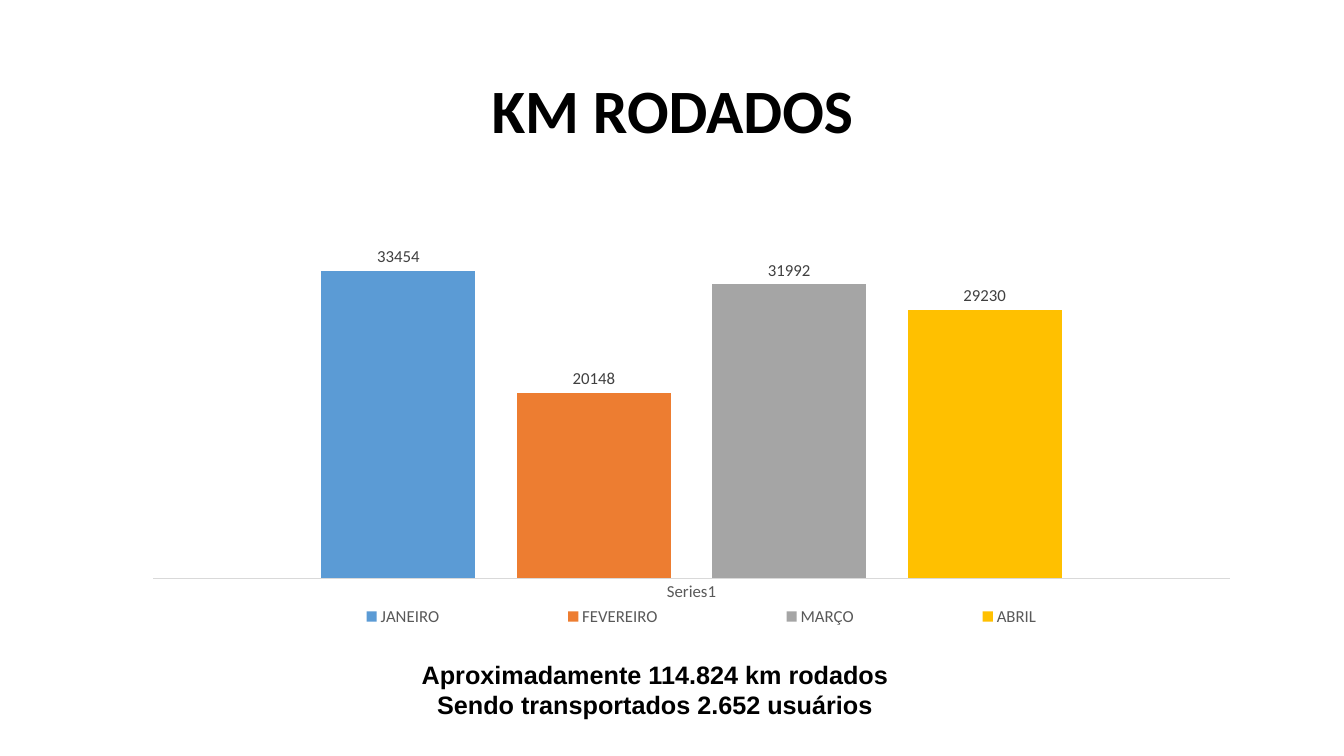
"""Build the slide on kilometres driven per month."""
from dataclasses import dataclass

import lxml.etree
import pptx
import pptx.chart.data
import pptx.dml.color
import pptx.enum.chart
import pptx.enum.text
import pptx.oxml.ns
import pptx.util

RGBColor = pptx.dml.color.RGBColor
BLACK = RGBColor(0x00, 0x00, 0x00)
DARK = RGBColor(0x40, 0x40, 0x40)
GREY = RGBColor(0x59, 0x59, 0x59)
PALE = RGBColor(0xD9, 0xD9, 0xD9)
BLUE = RGBColor(0x5B, 0x9B, 0xD5)
ORANGE = RGBColor(0xED, 0x7D, 0x31)
SILVER = RGBColor(0xA5, 0xA5, 0xA5)
GOLD = RGBColor(0xFF, 0xC0, 0x00)

WIDTH = pptx.util.Inches(13.33)
HEIGHT = pptx.util.Inches(7.5)


@dataclass(frozen=True)
class Box:
    """A frame in percent of the slide or chart size."""
    left: float
    top: float
    width: float
    height: float

    def place(self) -> tuple[int, int, int, int]:
        """Return the frame in slide units."""
        return (round(WIDTH * self.left / 100), round(HEIGHT * self.top / 100),
                round(WIDTH * self.width / 100), round(HEIGHT * self.height / 100))


@dataclass(frozen=True)
class Month:
    """One bar of the chart."""
    name: str
    km: int
    color: RGBColor


@dataclass(frozen=True)
class Note:
    """A centred block of bold text."""
    box: Box
    lines: tuple[str, ...]
    font: str
    size: int
    anchor: pptx.enum.text.MSO_ANCHOR
    spacing: float


MONTHS = (
    Month("JANEIRO", 33454, BLUE),
    Month("FEVEREIRO", 20148, ORANGE),
    Month("MARÇO", 31992, SILVER),
    Month("ABRIL", 29230, GOLD),
)
NOTES = (
    Note(Box(6.9, 5.33, 86.27, 19.33), ("KM RODADOS",), "Calibri", 44,
         pptx.enum.text.MSO_ANCHOR.MIDDLE, 0.9),
    Note(Box(12.23, 86.53, 73.52, 9.47),
         ("Aproximadamente 114.824 km rodados ", "Sendo transportados 2.652 usuários "),
         "Arial", 18, pptx.enum.text.MSO_ANCHOR.TOP, 1.0),
)
CHART = Box(6.9, 26.67, 86.27, 57.47)
PLOT = Box(5.2, 2.1, 92.9, 84.6)
LEGEND = Box(13, 91, 79, 9)


def style(font: pptx.text.text.Font, name: str, size: int, color: RGBColor) -> None:
    """Set the face, size and colour of a font."""
    font.name = name
    font.size = pptx.util.Pt(size)
    font.color.rgb = color


def write(slide: pptx.slide.Slide, note: Note) -> None:
    """Draw a block of text."""
    frame = slide.shapes.add_textbox(*note.box.place()).text_frame
    frame.word_wrap = True
    frame.vertical_anchor = note.anchor
    frame.text = "\n".join(note.lines)
    for line in frame.paragraphs:
        line.alignment = pptx.enum.text.PP_ALIGN.CENTER
        line.line_spacing = note.spacing
        line.font.bold = True
        style(line.font, note.font, note.size, BLACK)


def arrange(part: lxml.etree.ElementBase, index: int, box: Box, inner: bool) -> None:
    """Fix the place of a chart part."""
    name = pptx.oxml.ns.qn
    for old in part.findall(name("c:layout")):
        part.remove(old)
    layout = lxml.etree.Element(name("c:layout"))
    manual = lxml.etree.SubElement(layout, name("c:manualLayout"))
    rules = [("layoutTarget", "inner")] if inner else []
    rules += [("xMode", "edge"), ("yMode", "edge")]
    shares = zip("xywh", (box.left, box.top, box.width, box.height))
    rules += [(key, f"{share / 100:.3f}") for key, share in shares]
    for key, value in rules:
        lxml.etree.SubElement(manual, name(f"c:{key}")).set("val", value)
    part.insert(index, layout)


def plot(slide: pptx.slide.Slide) -> None:
    """Draw the column chart of the months."""
    data = pptx.chart.data.CategoryChartData(number_format="General")
    data.categories = ["Series1"]
    for month in MONTHS:
        data.add_series(month.name, [month.km])
    kind = pptx.enum.chart.XL_CHART_TYPE.COLUMN_CLUSTERED
    chart = slide.shapes.add_chart(kind, *CHART.place(), data).chart
    style(chart.font, "Calibri", 10, BLACK)
    chart.has_title = False

    bars = chart.plots[0]
    bars.gap_width = 219
    bars.overlap = -27
    bars.vary_by_categories = False
    for month, series in zip(MONTHS, bars.series):
        series.format.fill.solid()
        series.format.fill.fore_color.rgb = month.color
        labels = series.data_labels
        labels.show_value = True
        labels.position = pptx.enum.chart.XL_LABEL_POSITION.OUTSIDE_END
        style(labels.font, "Calibri", 12, DARK)

    base = chart.category_axis
    base.major_tick_mark = pptx.enum.chart.XL_TICK_MARK.NONE
    base.format.line.color.rgb = PALE
    base.format.line.width = pptx.util.Pt(0.75)
    style(base.tick_labels.font, "Calibri", 12, GREY)
    scale = chart.value_axis
    scale.minimum_scale = 0
    scale.maximum_scale = 40000
    scale.has_major_gridlines = False
    scale.visible = False

    chart.has_legend = True
    legend = chart.legend
    legend.position = pptx.enum.chart.XL_LEGEND_POSITION.BOTTOM
    legend.include_in_layout = False
    style(legend.font, "Calibri", 12, GREY)
    arrange(legend._element, 1, LEGEND, False)
    arrange(chart._chartSpace.chart.plotArea, 0, PLOT, True)


def main() -> None:
    """Build and save the deck."""
    deck = pptx.Presentation()
    deck.slide_width = WIDTH
    deck.slide_height = HEIGHT
    slide = deck.slides.add_slide(deck.slide_layouts[6])
    plot(slide)
    for note in NOTES:
        write(slide, note)
    deck.save("out.pptx")


if __name__ == "__main__":
    main()
